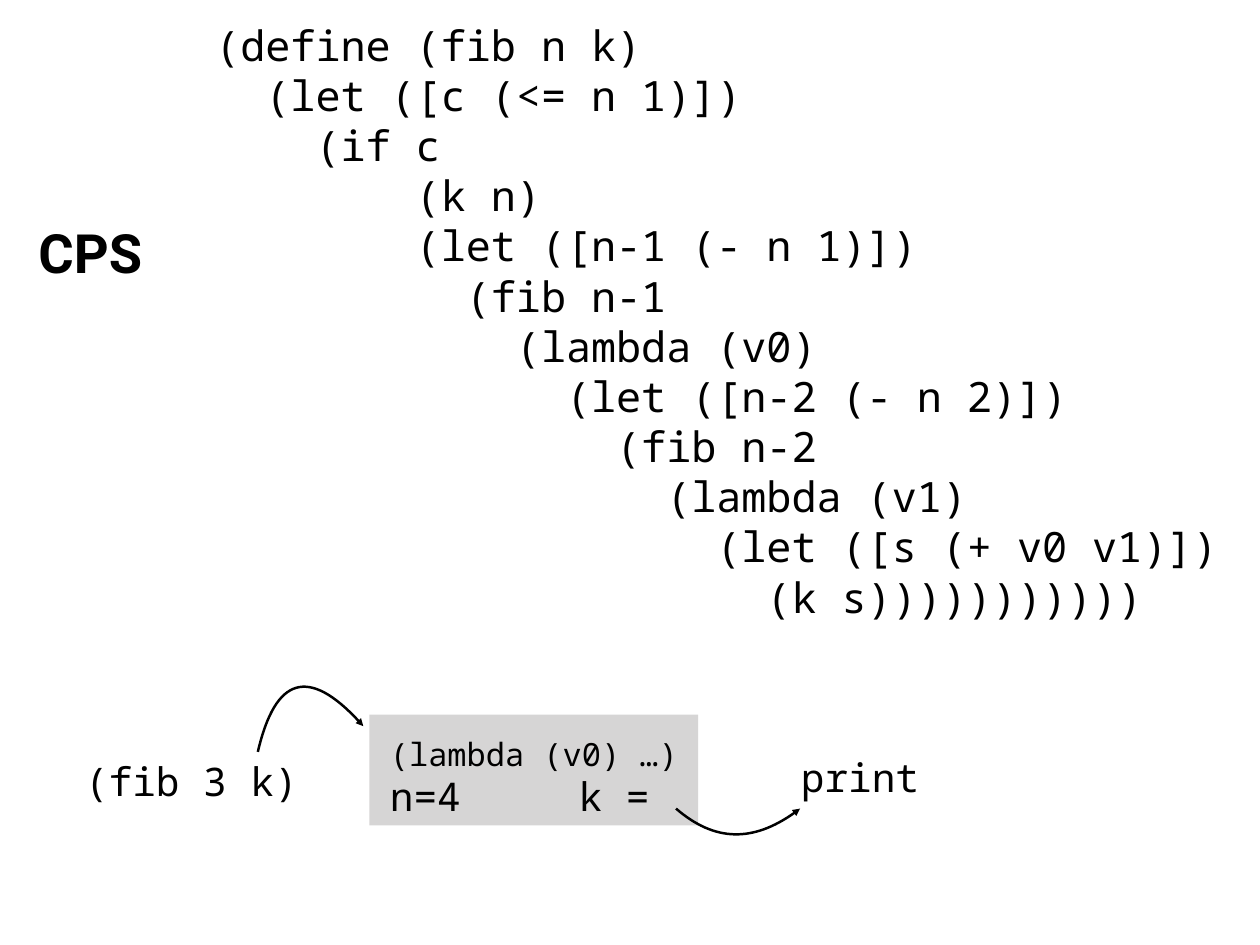
from lxml import etree
from pptx import Presentation
from pptx import util as u
from pptx.dml.color import RGBColor
from pptx.enum import shapes, text
from pptx.oxml import ns

BLACK = RGBColor(0, 0, 0)
GREY = RGBColor(0xD6, 0xD5, 0xD5)
MONO = "Noto Sans Mono"
TITLE_FONT = "Roboto"

FIB_CODE = """\
(define (fib n k)
  (let ([c (<= n 1)])
    (if c
        (k n)
        (let ([n-1 (- n 1)])
          (fib n-1
            (lambda (v0)
              (let ([n-2 (- n 2)])
                (fib n-2
                  (lambda (v1)
                    (let ([s (+ v0 v1)])
                      (k s)))))))))))"""


class SlideMaker:
    """Draws text, boxes and curved arrows on one page."""

    def __init__(self, page):
        self.page = page

    def label(self, frame, lines, font=MONO, bold=False, wrap=False,
              align=text.PP_ALIGN.LEFT, anchor=text.MSO_ANCHOR.MIDDLE, tab=None):
        box = self.page.shapes.add_textbox(*map(u.Inches, frame)).text_frame
        box.word_wrap = wrap
        box.auto_size = text.MSO_AUTO_SIZE.SHAPE_TO_FIT_TEXT
        box.vertical_anchor = anchor
        box.margin_left = box.margin_right = u.Inches(0.06)
        box.margin_top = box.margin_bottom = u.Inches(0.06)
        for index, (line, size) in enumerate(lines):
            para = box.add_paragraph() if index else box.paragraphs[0]
            para.text = line
            para.alignment = align
            if tab and "\t" in line:
                stops = etree.SubElement(para._p.get_or_add_pPr(), ns.qn("a:tabLst"))
                etree.SubElement(stops, ns.qn("a:tab"), pos=str(u.Inches(tab)), algn="l")
            para.font.name = font
            para.font.size = u.Pt(size)
            para.font.bold = bold
            para.font.color.rgb = BLACK

    def panel(self, frame, colour):
        box = self.page.shapes.add_shape(shapes.MSO_SHAPE.RECTANGLE, *map(u.Inches, frame))
        box.shadow.inherit = False
        box.fill.solid()
        box.fill.fore_color.rgb = colour
        box.line.fill.background()

    def curved_arrow(self, start, controls, end, apex):
        def to_emu(point):
            return tuple(map(u.Inches, point))

        builder = self.page.shapes.build_freeform(*to_emu(start))
        builder.add_line_segments([to_emu(apex), to_emu(end)], close=False)
        curve = builder.convert_to_shape()
        outline = curve._element.find(".//" + ns.qn("a:path"))
        for segment in outline.findall(ns.qn("a:lnTo")):
            outline.remove(segment)
        bezier = etree.SubElement(outline, ns.qn("a:cubicBezTo"))
        for x, y in map(to_emu, (*controls, end)):
            etree.SubElement(bezier, ns.qn("a:pt"), x=str(x - curve.left), y=str(y - curve.top))
        curve.shadow.inherit = False
        curve.fill.background()
        curve.line.color.rgb = BLACK
        curve.line.width = u.Pt(2)
        etree.SubElement(curve.line._ln, ns.qn("a:tailEnd"), type="triangle")


def main():
    deck = Presentation()
    deck.slide_width = u.Inches(14.22)
    deck.slide_height = u.Inches(10.67)
    maker = SlideMaker(deck.slides.add_slide(deck.slide_layouts[6]))

    maker.label((2.37, 0.16, 11.58, 6.44), [(line, 34) for line in FIB_CODE.splitlines()],
                wrap=True, anchor=text.MSO_ANCHOR.TOP)
    maker.label((0.33, 2.42, 1.38, 0.84), [("CPS", 44)], font=TITLE_FONT, bold=True,
                align=text.PP_ALIGN.CENTER)
    maker.label((0.9, 8.51, 2.53, 0.61), [("(fib 3 k)", 32)])
    maker.panel((4.17, 8.07, 3.71, 1.25), GREY)
    maker.curved_arrow((7.63, 9.13), [(8.07, 9.51), (8.54, 9.51)], (9.03, 9.13),
                       apex=(8.33, 9.42))
    maker.label((8.98, 8.47, 1.46, 0.61), [("print", 32)])
    maker.label((4.34, 8.23, 3.59, 1.03), [("(lambda (v0) …)", 26), ("n=4\tk =", 32)],
                wrap=True, anchor=text.MSO_ANCHOR.TOP, tab=2.13)
    maker.curved_arrow((2.91, 8.49), [(3.11, 7.63), (3.51, 7.53)], (4.1, 8.2),
                       apex=(3.4, 7.76))
    deck.save("out.pptx")


if __name__ == "__main__":
    main()
